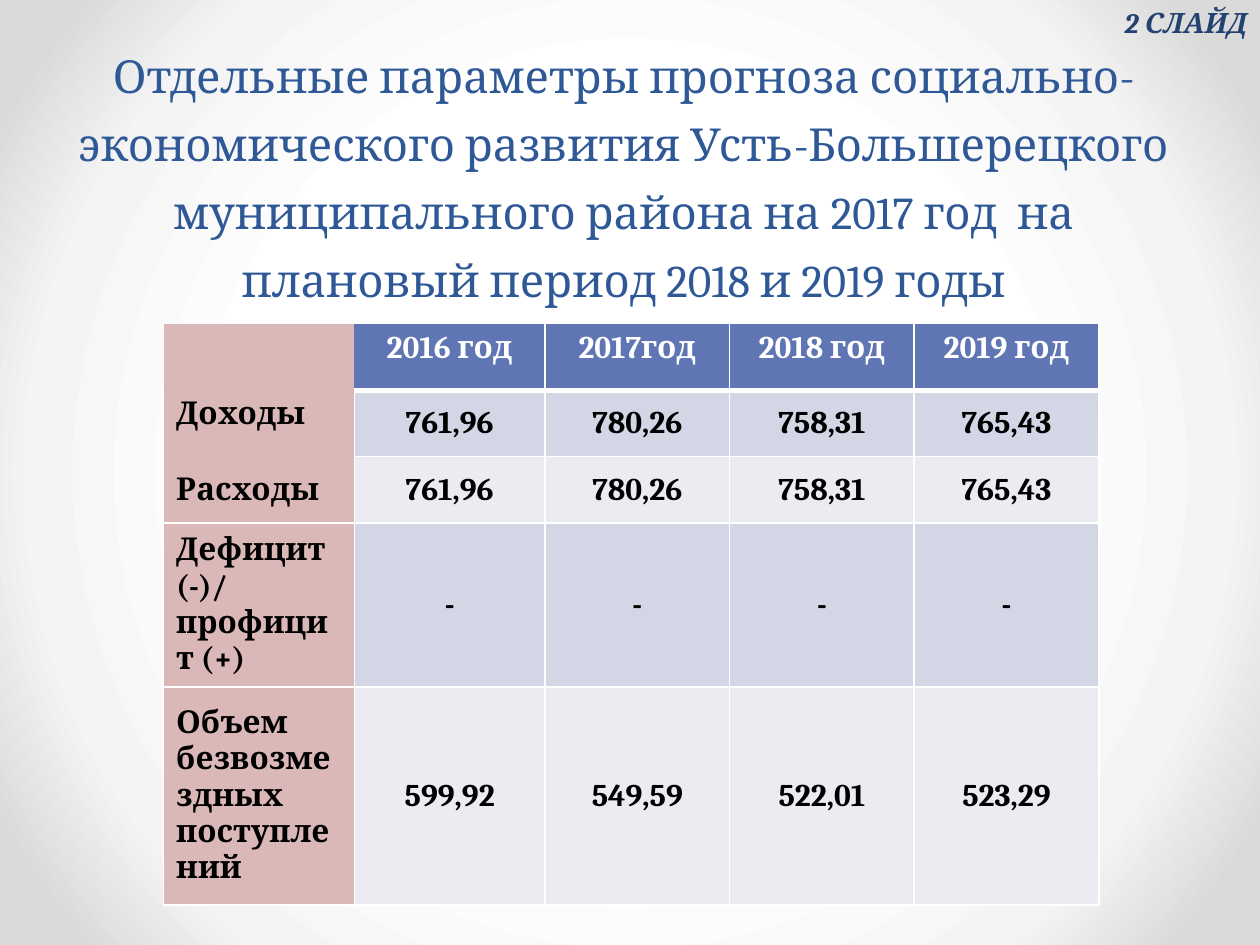
import pptx
import pptx.dml.color
import pptx.enum.text
import pptx.oxml
import pptx.oxml.ns
import pptx.util
from lxml import etree

Pt = pptx.util.Pt
RGBColor = pptx.dml.color.RGBColor
ALIGN = pptx.enum.text.PP_ALIGN
ANCHOR = pptx.enum.text.MSO_ANCHOR

FONT = "Cambria"
WHITE = RGBColor(0xFF, 0xFF, 0xFF)
BLACK = RGBColor(0, 0, 0)
TITLE_BLUE = RGBColor(0x2F, 0x58, 0x97)
LABEL_BLUE = RGBColor(0x23, 0x42, 0x71)
HEADER_BLUE = RGBColor(0x60, 0x76, 0xB4)
PINK = RGBColor(0xDA, 0xB8, 0xB8)
BAND_DARK = RGBColor(0xD2, 0xD6, 0xE5)
BAND_LIGHT = RGBColor(0xEA, 0xEC, 0xF2)
BACKGROUND_STOPS = [
    (50, WHITE),
    (76, RGBColor(0xF4, 0xF4, 0xF4)),
    (92, RGBColor(0xDA, 0xDA, 0xDA)),
]

TITLE = (
    "Отдельные параметры прогноза социально-экономического развития "
    "Усть-Большерецкого муниципального района на 2017 год  на плановый "
    "период 2018 и 2019 годы"
)
ROWS = [
    ["", "2016 год", "2017год", "2018 год", "2019 год"],
    ["Доходы", "761,96", "780,26", "758,31", "765,43"],
    ["Расходы", "761,96", "780,26", "758,31", "765,43"],
    ["Дефицит (-)/\nпрофицит (+)", "-", "-", "-", "-"],
    ["Объем безвозмездных поступлений", "599,92", "549,59", "522,01", "523,29"],
]
COLUMN_WIDTHS = [109, 109, 105.5, 105.5, 105.5]
ROW_HEIGHTS = [38, 38, 38, 90, 124.5]


def apply(target, values):
    for name, value in values.items():
        setattr(target, name, value)


class SlideBuilder:
    def __init__(self, slide, font):
        self.slide = slide
        self.font = font

    def background(self, stops):
        """Fill the background with a circular gradient from the centre."""
        fill = self.slide.background.fill
        fill.solid()
        properties = self.slide.element.find(".//" + pptx.oxml.ns.qn("p:bgPr"))
        marks = "".join(
            f'<a:gs pos="{position * 1000}"><a:srgbClr val="{color}"/></a:gs>'
            for position, color in stops
        )
        gradient = pptx.oxml.parse_xml(
            f'<a:gradFill {pptx.oxml.ns.nsdecls("a")} rotWithShape="1">'
            f'<a:gsLst>{marks}</a:gsLst><a:path path="circle">'
            '<a:fillToRect l="50000" t="50000" r="50000" b="50000"/>'
            "</a:path></a:gradFill>"
        )
        properties.replace(properties[0], gradient)

    def fill_text(self, frame, text, align, font, paragraph=None):
        for index, line in enumerate(text.split("\n")):
            para = frame.add_paragraph() if index else frame.paragraphs[0]
            apply(para, {"alignment": align, **(paragraph or {})})
            span = para.add_run()
            span.text = line
            apply(span.font, {"name": self.font, "size": font["size"],
                              "bold": font.get("bold", False),
                              "italic": font.get("italic", False)})
            span.font.color.rgb = font["color"]

    def text(self, place, text, align, font, frame=None, paragraph=None):
        box = self.slide.shapes.add_textbox(*map(Pt, place))
        apply(box.text_frame, {"word_wrap": True, **(frame or {})})
        self.fill_text(box.text_frame, text, align, font, paragraph)

    def border(self, cell, widths):
        """Draw white borders; a width of zero hides that side."""
        properties = cell._tc.get_or_add_tcPr()
        for side in "LRTB":
            width = widths.get(side, 1)
            line = etree.SubElement(properties, pptx.oxml.ns.qn(f"a:ln{side}"))
            line.set("w", str(Pt(width)))
            kind = "solidFill" if width else "noFill"
            paint = etree.SubElement(line, pptx.oxml.ns.qn(f"a:{kind}"))
            if width:
                color = etree.SubElement(paint, pptx.oxml.ns.qn("a:srgbClr"))
                color.set("val", str(WHITE))

    def table(self, left, top, rows, widths, heights):
        place = map(Pt, (left, top, sum(widths), sum(heights)))
        table = self.slide.shapes.add_table(len(rows), len(widths), *place).table
        apply(table, {"first_row": False, "horz_banding": False})
        for column, width in zip(table.columns, widths):
            column.width = Pt(width)
        for row, height in zip(table.rows, heights):
            row.height = Pt(height)
        for r, texts in enumerate(rows):
            for c, text in enumerate(texts):
                self.cell(table.cell(r, c), r, c, text)

    def cell(self, cell, row, column, text):
        header, label = row == 0, column == 0
        if label:
            fill = PINK
            hidden = ["LRTB", "TB", "T", "", ""][row]
            widths = dict.fromkeys(hidden, 0)
        elif header:
            fill = HEADER_BLUE
            widths = {"B": 3, "L": 0 if column == 1 else 1}
        else:
            fill = BAND_DARK if row % 2 else BAND_LIGHT
            widths = {"T": 3 if row == 1 else 1}
        self.border(cell, widths)
        cell.fill.solid()
        cell.fill.fore_color.rgb = fill
        top = header or (label and row == 1)
        cell.vertical_anchor = ANCHOR.TOP if top else ANCHOR.MIDDLE
        if text:
            self.fill_text(cell.text_frame, text,
                           ALIGN.LEFT if label else ALIGN.CENTER,
                           {"size": Pt(18), "bold": True,
                            "color": WHITE if header else BLACK})


def main():
    deck = pptx.Presentation()
    apply(deck, {"slide_width": Pt(720), "slide_height": Pt(540)})
    builder = SlideBuilder(deck.slides.add_slide(deck.slide_layouts[6]), FONT)
    builder.background(BACKGROUND_STOPS)
    builder.text((36.5, 31.5, 640, 147.5), TITLE, ALIGN.CENTER,
                 {"size": Pt(26), "color": TITLE_BLUE},
                 {"vertical_anchor": ANCHOR.BOTTOM},
                 {"line_spacing": Pt(39)})
    builder.table(93.5, 185, ROWS, COLUMN_WIDTHS, ROW_HEIGHTS)
    builder.text((628, -0.5, 98, 26.5), "2 СЛАЙД", ALIGN.RIGHT,
                 {"size": Pt(16), "color": LABEL_BLUE,
                  "bold": True, "italic": True},
                 {"margin_right": Pt(13.5)})
    deck.save("out.pptx")


if __name__ == "__main__":
    main()
